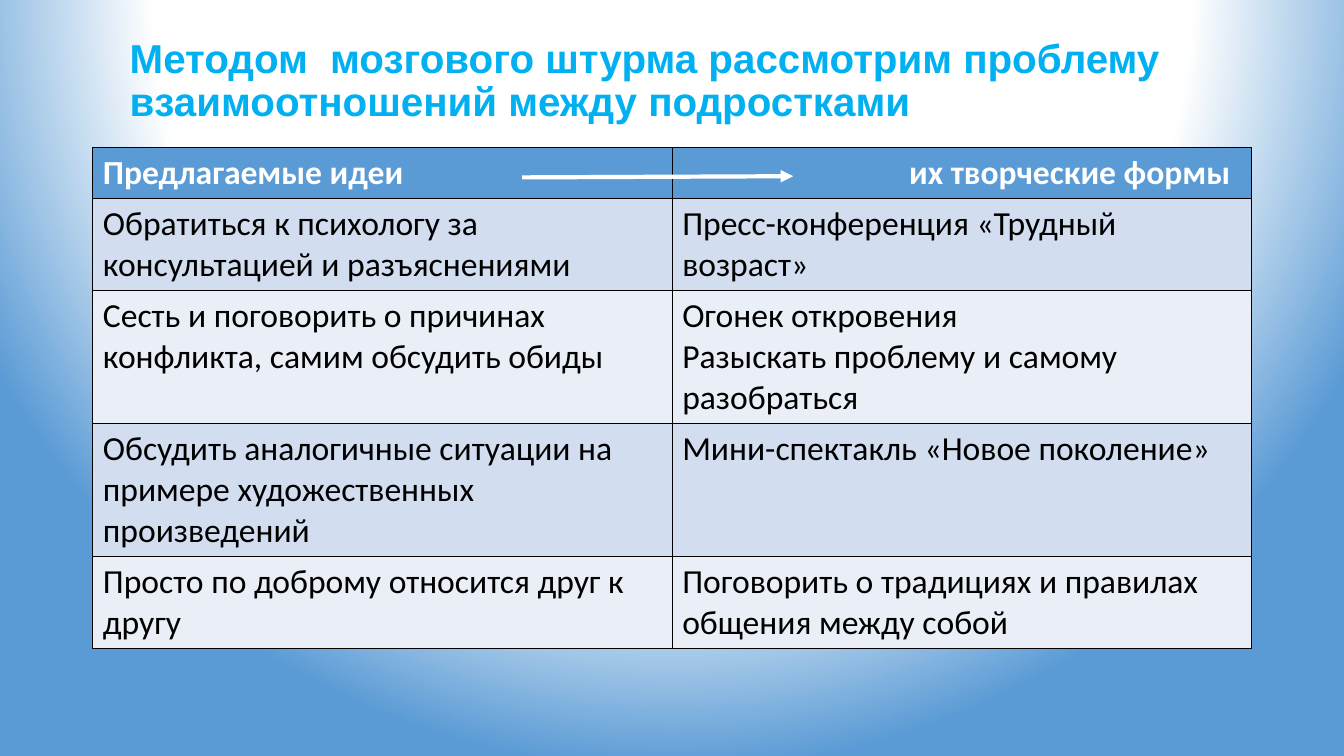
"""Build a slide with a table of brainstormed ideas and their creative forms."""
from pptx import Presentation
from pptx.dml.color import RGBColor
from pptx.enum.shapes import MSO_CONNECTOR as CONN
from pptx.enum.text import MSO_ANCHOR as ANCHOR, PP_ALIGN as ALIGN
from pptx.oxml import parse_xml
from pptx.oxml.ns import nsdecls
from pptx.util import Cm, Pt

COLORS = {
    "white": "FFFFFF",
    "black": "000000",
    "blue": "5B9BD5",
    "title": "00B0F0",
    "odd": "D2DEEF",
    "even": "EAEFF7",
}
TITLE = "Методом  мозгового штурма рассмотрим проблему взаимоотношений между подростками"
ROWS = [
    ("Предлагаемые идеи", "их творческие формы"),
    ("Обратиться к психологу за консультацией и разъяснениями",
     "Пресс-конференция «Трудный возраст»"),
    ("Сесть и поговорить о причинах конфликта, самим обсудить обиды",
     "Огонек откровения\nРазыскать проблему и самому разобраться"),
    ("Обсудить аналогичные ситуации на примере художественных произведений",
     "Мини-спектакль «Новое поколение»"),
    ("Просто по доброму относится друг к другу",
     "Поговорить о традициях и правилах общения между собой"),
]
HEIGHTS = [1.29, 2.32, 3.35, 3.35, 2.32]


def rgb(name):
    return RGBColor.from_string(COLORS[name])


def format_text(tf, font, size, color, bold):
    for p in tf.paragraphs:
        for r in p.runs:
            r.font.name = font
            r.font.size = Pt(size)
            r.font.bold = bold
            r.font.color.rgb = rgb(color)


def set_background(s):
    stops = "".join(
        f'<a:gs pos="{pos * 1000}"><a:srgbClr val="{COLORS[name]}"/></a:gs>'
        for pos, name in [(0, "white"), (67, "white"), (100, "blue")])
    bg = parse_xml(
        f'<p:bg {nsdecls("p", "a")}><p:bgPr><a:gradFill rotWithShape="1">'
        f'<a:gsLst>{stops}</a:gsLst><a:path path="circle">'
        '<a:fillToRect l="50000" t="-80000" r="50000" b="180000"/></a:path>'
        '</a:gradFill><a:effectLst/></p:bgPr></p:bg>')
    s.element.cSld.insert(0, bg)


def add_title(s):
    tf = s.shapes.add_textbox(Cm(3.02), Cm(1.02), Cm(29.03), Cm(2.08)).text_frame
    tf.word_wrap = True
    tf.vertical_anchor = ANCHOR.MIDDLE
    tf.text = TITLE
    tf.paragraphs[0].line_spacing = 0.9
    format_text(tf, "Arial", 28.8, "title", True)


def add_borders(cell):
    tc_pr = cell._tc.get_or_add_tcPr()
    for side in "LRTB":
        tc_pr.append(parse_xml(
            f'<a:ln{side} {nsdecls("a")} w="12700"><a:solidFill>'
            f'<a:srgbClr val="{COLORS["black"]}"/></a:solidFill></a:ln{side}>'))


def fill_cell(cell, text, row):
    add_borders(cell)
    cell.fill.solid()
    cell.fill.fore_color.rgb = rgb("blue" if row == 0 else "odd" if row % 2 else "even")
    cell.text_frame.text = text
    format_text(cell.text_frame, "Calibri", 24, "black" if row else "white", row == 0)


def add_ideas_table(s):
    table = s.shapes.add_table(len(ROWS), 2, Cm(2.34), Cm(3.72),
                               Cm(29.2), Cm(sum(HEIGHTS))).table
    for i, (texts, height) in enumerate(zip(ROWS, HEIGHTS)):
        table.rows[i].height = Cm(height)
        for j, text in enumerate(texts):
            fill_cell(table.cell(i, j), text, i)
    forms = table.cell(0, 1)
    forms.margin_right = Cm(0.53)
    forms.text_frame.paragraphs[0].alignment = ALIGN.RIGHT


def add_arrow(s, x1, y1, x2, y2):
    arrow = s.shapes.add_connector(CONN.STRAIGHT, Cm(x1), Cm(y1), Cm(x2), Cm(y2))
    arrow.line.color.rgb = rgb("white")
    arrow.line.width = Pt(3)
    arrow.line._get_or_add_ln().append(
        parse_xml(f'<a:tailEnd {nsdecls("a")} type="triangle"/>'))
    arrow._element.spPr.append(parse_xml(f'<a:effectLst {nsdecls("a")}/>'))


def main():
    prs = Presentation()
    prs.slide_width, prs.slide_height = Cm(33.87), Cm(19.05)
    s = prs.slides.add_slide(prs.slide_layouts[6])
    set_background(s)
    add_title(s)
    add_ideas_table(s)
    add_arrow(s, 13.16, 4.47, 19.99, 4.44)
    prs.save("out.pptx")


if __name__ == "__main__":
    main()
